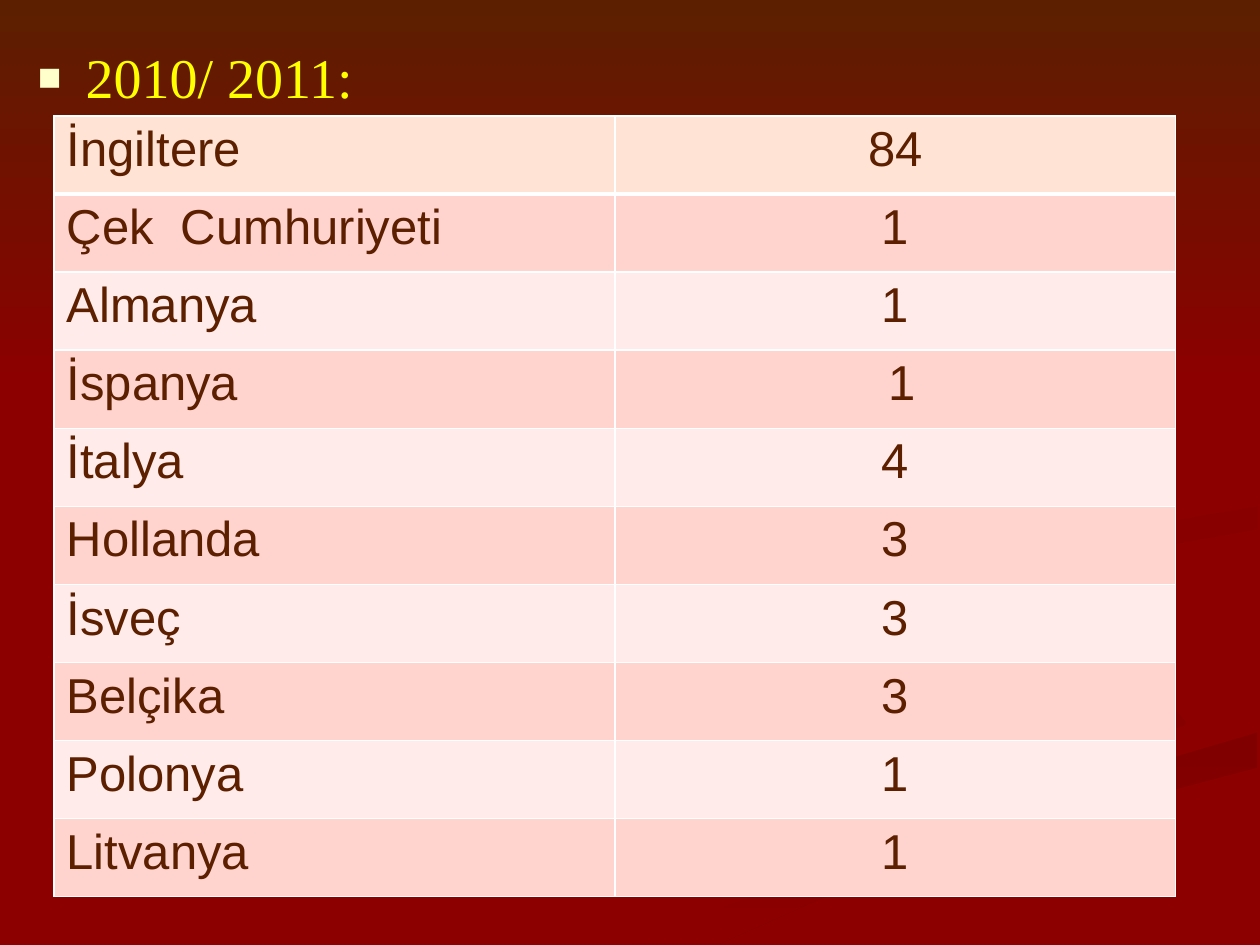
"""Build a slide listing 2010/2011 counts by country in a two-column table."""
from dataclasses import dataclass

from lxml import etree
from pptx import Presentation
from pptx import util as u
from pptx.dml.color import RGBColor
from pptx.enum import shapes, text
from pptx.oxml import ns

COLORS = {
    "red": "8C0000", "brown": "5C1F00", "yellow": "FFFF00", "cream": "FFFFCC",
    "white": "FFFFFF", "header": "FFE3D5", "odd": "FFD4CF", "even": "FFEBE9",
    "shade": "860000", "deep": "800000", "dark": "840000", "dim": "820000",
}


@dataclass(frozen=True)
class Swirl:
    """A closed background outline in inches with a two-colour gradient."""
    points: tuple[tuple[float, float], ...]
    start: str
    end: str
    angle: int = 0


@dataclass(frozen=True)
class Country:
    """One table row."""
    name: str
    count: str


SWIRLS = (
    Swirl(((5.75, 4.59), (6.1, 5), (7.7, 5.5), (7.6, 5.9), (5.4, 6.5), (3, 7.49),
           (3.6, 7.49), (5, 6.87), (7.8, 6.05), (8, 5.81), (7.8, 5.53), (6.1, 4.95)),
          "red", "shade"),
    Swirl(((7.24, 4.64), (7.66, 5.12), (8.9, 5.53), (9.18, 5.81), (8.94, 6.05),
           (9.32, 5.89), (9.43, 5.7), (9.19, 5.47), (7.74, 5.03)), "red", "shade", 45),
    Swirl(((5.03, 7.49), (5.71, 7.49), (7.22, 6.82), (9.98, 6.09), (9.98, 5.81),
           (7.64, 6.47), (6.3, 6.93)), "deep", "red", 90),
    Swirl(((7.25, 4.64), (9.2, 5.47), (9.43, 5.75), (7, 6.55), (4.77, 7.49),
           (5.03, 7.49), (7, 6.69), (9.99, 5.81), (9.99, 5.38), (8.3, 4.98),
           (7.81, 4.6), (8.65, 4.24), (9.99, 4.02), (9.99, 3.87), (7.7, 4.27)),
          "red", "red"),
    Swirl(((7.81, 4.6), (8.26, 4.96), (8.05, 4.72), (8.4, 4.48), (9.98, 4.2),
           (9.98, 4.02), (8.35, 4.3)), "dark", "red", 45),
    Swirl(((7.62, 2.33), (8.7, 3), (8.82, 3.54), (6.25, 4.26), (5.77, 4.62),
           (6.22, 5), (6, 4.56), (8.25, 4.02), (8.94, 3.44), (8.5, 2.8)),
          "dim", "red", 45),
)

COUNTRIES = (
    Country("İngiltere", "84"), Country("Çek  Cumhuriyeti", "1"),
    Country("Almanya", "1"), Country("İspanya", " 1"), Country("İtalya", "4"),
    Country("Hollanda", "3"), Country("İsveç", "3"), Country("Belçika", "3"),
    Country("Polonya", "1"), Country("Litvanya", "1"),
)


def rgb(name: str) -> RGBColor:
    """Return a named colour."""
    return RGBColor.from_string(COLORS[name])


def add_child(parent, tag: str, **attributes: str):
    """Append a DrawingML element."""
    return etree.SubElement(parent, ns.qn(f"a:{tag}"), attributes)


def write_text(frame, content: str, *, font: str, size: int, color: str,
               align=text.PP_ALIGN.LEFT):
    """Write one formatted paragraph and return it."""
    para = frame.paragraphs[0]
    para.alignment = align
    span = para.add_run()
    span.text = content
    span.font.name = font
    span.font.size = u.Pt(size)
    span.font.bold = False
    span.font.color.rgb = rgb(color)
    return para


def paint(shape, start: str, end: str, angle: int) -> None:
    """Fill a shape with a plain colour or a gradient, without line or shadow."""
    shape.shadow.inherit = False
    shape.line.fill.background()
    if start == end:
        shape.fill.solid()
        shape.fill.fore_color.rgb = rgb(start)
        return
    shape.fill.gradient()
    shape.fill.gradient_angle = -angle % 360
    for stop, color in zip(shape.fill.gradient_stops, (start, end)):
        stop.color.rgb = rgb(color)


def draw_swirl(page, swirl: Swirl) -> None:
    """Draw one background outline."""
    first, *rest = [(u.Inches(x), u.Inches(y)) for x, y in swirl.points]
    builder = page.shapes.build_freeform(*first)
    builder.add_line_segments(rest, close=True)
    paint(builder.convert_to_shape(), swirl.start, swirl.end, swirl.angle)


def draw_top_band(page) -> None:
    """Draw the brown fade across the top."""
    band = page.shapes.add_shape(shapes.MSO_SHAPE.RECTANGLE, 0, 0,
                                 u.Inches(10), u.Inches(3.08))
    paint(band, "brown", "red", 90)


def draw_title(page, content: str) -> None:
    """Place the bulleted heading above the background."""
    title = page.shapes.title
    title.left, title.top = u.Inches(0.2), u.Inches(0.29)
    title.width, title.height = u.Inches(9.3), u.Inches(6.41)
    frame = title.text_frame
    frame.word_wrap = True
    frame.auto_size = text.MSO_AUTO_SIZE.NONE
    frame.vertical_anchor = text.MSO_ANCHOR.TOP
    para = write_text(frame, content, font="Times New Roman", size=32, color="yellow")
    para.space_before = u.Pt(6.4)
    properties = para._p.get_or_add_pPr()
    properties.set("marL", str(u.Inches(0.38)))
    properties.set("indent", str(u.Inches(-0.38)))
    add_child(add_child(properties, "buClr"), "srgbClr", val=COLORS["cream"])
    add_child(properties, "buSzPct", val="70000")
    add_child(properties, "buFont", typeface="Arial")
    add_child(properties, "buChar", char="■")
    page.shapes._spTree.append(title.element)


def set_border(cell, side: str, width: float) -> None:
    """Give one cell side a white line, ahead of the cell fill."""
    line = add_child(cell._tc.get_or_add_tcPr(), side, w=str(u.Pt(width)))
    add_child(add_child(line, "solidFill"), "srgbClr", val=COLORS["white"])


def draw_table(page, countries: tuple[Country, ...]) -> None:
    """Draw the banded country table."""
    row_height = u.Inches(0.62)
    table = page.shapes.add_table(
        len(countries), 2, u.Inches(0.43), u.Inches(0.92),
        u.Inches(8.9), row_height * len(countries)).table
    table.first_row = table.horz_banding = False
    aligns = (text.PP_ALIGN.LEFT, text.PP_ALIGN.CENTER)
    for index, country in enumerate(countries):
        table.rows[index].height = row_height
        band = "header" if index == 0 else ("even", "odd")[index % 2]
        for column, content in enumerate((country.name, country.count)):
            cell = table.cell(index, column)
            for side in ("lnL", "lnR", "lnT", "lnB"):
                heavy = (index, side) in ((0, "lnB"), (1, "lnT"))
                set_border(cell, side, 3 if heavy else 1)
            cell.fill.solid()
            cell.fill.fore_color.rgb = rgb(band)
            write_text(cell.text_frame, content, font="Arial", size=28,
                       color="brown", align=aligns[column])


def main() -> None:
    """Build and save the deck."""
    deck = Presentation()
    deck.slide_width, deck.slide_height = u.Inches(10), u.Inches(7.5)
    page = deck.slides.add_slide(deck.slide_layouts[5])
    page.background.fill.solid()
    page.background.fill.fore_color.rgb = rgb("red")
    for swirl in SWIRLS:
        draw_swirl(page, swirl)
    draw_top_band(page)
    draw_title(page, "2010/ 2011:")
    draw_table(page, COUNTRIES)
    deck.save("out.pptx")


if __name__ == "__main__":
    main()
